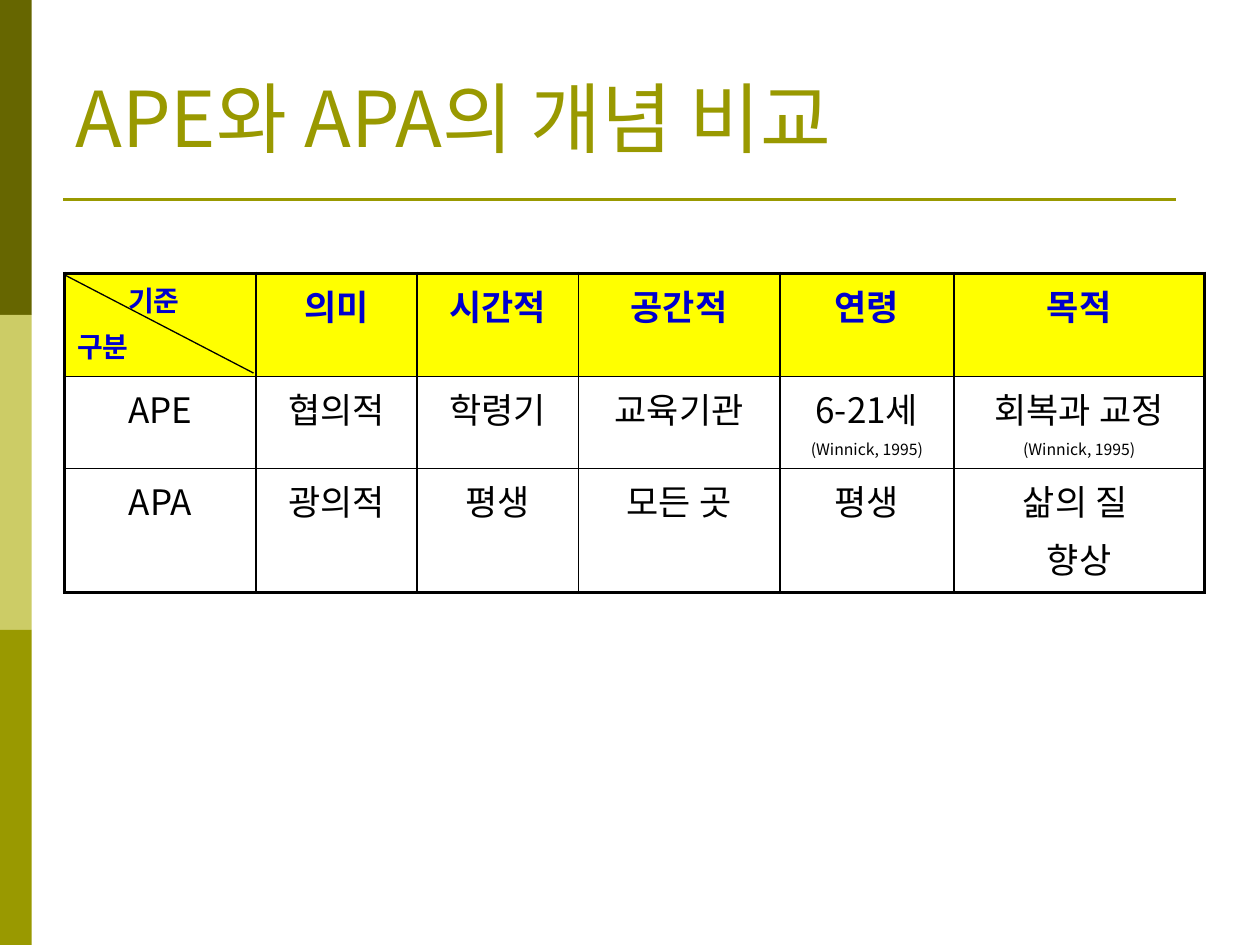
"""Build a slide that compares the concepts of APE and APA in a table."""
from dataclasses import dataclass

from lxml import etree
from pptx import Presentation, util as u
from pptx.dml.color import RGBColor
from pptx.enum import shapes, text
from pptx.oxml import ns


@dataclass(frozen=True)
class Theme:
    font: str = "Noto Sans CJK KR"
    dark: str = "666600"
    pale: str = "CCCC66"
    olive: str = "999900"
    yellow: str = "FFFF00"
    blue: str = "0000CC"
    black: str = "000000"
    title: int = 44
    body: int = 20
    label: int = 16
    note: int = 9


theme = Theme()


def write(frame, words, size=theme.body, color=theme.black, bold=False,
          align=text.PP_ALIGN.CENTER, gap=0.2, inset=0, first=True):
    para = frame.paragraphs[0] if first else frame.add_paragraph()
    para.alignment = align
    para.space_before = u.Pt(size * gap)
    if inset:
        para._p.get_or_add_pPr().set("marL", str(u.Cm(inset)))
    run = para.add_run()
    run.text = words
    run.font.size = u.Pt(size)
    run.font.bold = bold
    run.font.name = theme.font
    run.font.color.rgb = RGBColor.from_string(color)
    east = etree.SubElement(run._r.get_or_add_rPr(), ns.qn("a:ea"))
    east.set("typeface", theme.font)


def rule(start, end, color, width):
    line = slide.shapes.add_connector(
        shapes.MSO_CONNECTOR.STRAIGHT, *map(u.Cm, start + end))
    line.line.color.rgb = RGBColor.from_string(color)
    line.line.width = u.Pt(width)
    etree.SubElement(line._element.spPr, ns.qn("a:effectLst"))


deck = Presentation()
deck.slide_width, deck.slide_height = u.Cm(25.4), u.Cm(19.05)
slide = deck.slides.add_slide(deck.slide_layouts[6])

band = 19.05 / 3
for i, color in enumerate((theme.dark, theme.pale, theme.olive)):
    bar = slide.shapes.add_shape(
        shapes.MSO_SHAPE.RECTANGLE, 0, u.Cm(i * band), u.Cm(0.64), u.Cm(band))
    bar.shadow.inherit = False
    bar.fill.solid()
    bar.fill.fore_color.rgb = RGBColor.from_string(color)
    bar.line.fill.background()

rule((1.27, 4.02), (23.7, 4.02), theme.olive, 1.5)

title = slide.shapes.add_textbox(
    u.Cm(1.27), u.Cm(0.76), u.Cm(22.86), u.Cm(3.18)).text_frame
title.word_wrap = True
title.vertical_anchor = text.MSO_ANCHOR.MIDDLE
write(title, "APE와 APA의 개념 비교", size=theme.title, color=theme.olive,
      align=text.PP_ALIGN.LEFT, gap=0)

source = "(Winnick, 1995)"
rows = [
    [["기준", "구분"], ["의미"], ["시간적"], ["공간적"], ["연령"], ["목적"]],
    [["APE"], ["협의적"], ["학령기"], ["교육기관"],
     ["6-21세", source], ["회복과 교정", source]],
    [["APA"], ["광의적"], ["평생"], ["모든 곳"], ["평생"], ["삶의 질 ", "향상"]],
]
wide = (3.86, 3.25, 3.25, 4.06, 3.51, 5.05)
high = (2.08, 1.85, 2.51)
grid = slide.shapes.add_table(
    len(high), len(wide), u.Cm(1.3), u.Cm(5.51),
    u.Cm(sum(wide)), u.Cm(sum(high))).table
grid.first_row = grid.horz_banding = False
for col, width in zip(grid.columns, wide):
    col.width = u.Cm(width)
for row, height in zip(grid.rows, high):
    row.height = u.Cm(height)

for r, row in enumerate(rows):
    for c, lines in enumerate(row):
        cell = grid.cell(r, c)
        head, corner = r == 0, r == c == 0
        edges = {"L": c == 0, "R": c == len(wide) - 1,
                 "T": head, "B": r == len(high) - 1}
        for side, outer in edges.items():
            edge = etree.SubElement(
                cell._tc.get_or_add_tcPr(), ns.qn("a:ln" + side),
                w=str(u.Pt(2.25 if outer else 1)))
            fill = etree.SubElement(edge, ns.qn("a:solidFill"))
            etree.SubElement(fill, ns.qn("a:srgbClr"), val=theme.black)
        if head:
            cell.fill.solid()
            cell.fill.fore_color.rgb = RGBColor.from_string(theme.yellow)
        else:
            cell.fill.background()
        for i, words in enumerate(lines):
            size = (theme.label if corner else
                    theme.note if words == source else theme.body)
            write(cell.text_frame, words, size=size, bold=head,
                  color=theme.blue if head else theme.black,
                  align=text.PP_ALIGN.LEFT if corner else text.PP_ALIGN.CENTER,
                  inset=1.03 if corner and i == 0 else 0, first=i == 0)

rule((1.3, 5.54), (5.11, 7.52), theme.black, 0.75)

deck.save("out.pptx")
